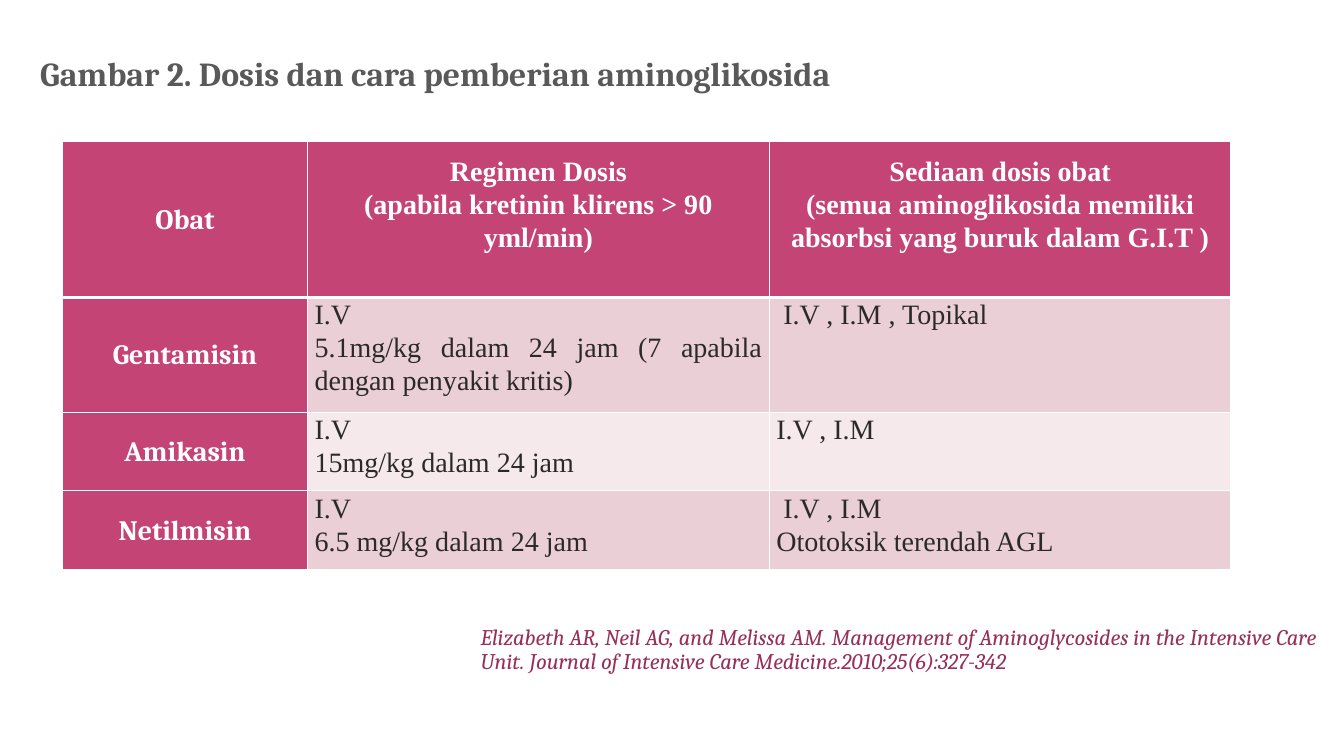
from lxml import etree
from pptx import Presentation
from pptx.dml.color import RGBColor
from pptx.enum.text import MSO_ANCHOR, PP_ALIGN
from pptx.oxml.ns import qn
from pptx.util import Inches, Pt

CENTER, JUSTIFY = PP_ALIGN.CENTER, PP_ALIGN.JUSTIFY
TOP, MIDDLE, BOTTOM = MSO_ANCHOR.TOP, MSO_ANCHOR.MIDDLE, MSO_ANCHOR.BOTTOM
SERIF, ROMAN = "Cambria", "Times New Roman"
COLORS = {
    "title": "595959", "citation": "972F57", "text": "2C2A28",
    "white": "FFFFFF", "header": "C44475", "band_dark": "EACFD6",
    "band_light": "F5E9EC",
}


def write(tf, text, size, font, color, spacing, align=None, bold=False, italic=False):
    tf.text = text
    for p in tf.paragraphs:
        p.alignment = align
        p.line_spacing = spacing
        for r in p.runs:
            r.font.size = Pt(size)
            r.font.name = font
            r.font.bold = bold
            r.font.italic = italic
            r.font.color.rgb = RGBColor.from_string(COLORS[color])


def add_borders(cell, bottom_width):
    tc_pr = cell._tc.get_or_add_tcPr()
    widths = {"a:lnL": 1, "a:lnR": 1, "a:lnT": 1, "a:lnB": bottom_width}
    for i, (tag, width) in enumerate(widths.items()):
        ln = etree.Element(qn(tag), w=str(Pt(width)))
        fill = etree.SubElement(ln, qn("a:solidFill"))
        etree.SubElement(fill, qn("a:srgbClr"), val=COLORS["white"])
        tc_pr.insert(i, ln)


prs = Presentation()
prs.slide_width, prs.slide_height = Inches(13.33), Inches(7.5)
s = prs.slides.add_slide(prs.slide_layouts[6])

# Title and citation
texts = [
    (0.3, 0.52, 9.5, 0.48, TOP, 24, "title", True,
     "Gambar 2. Dosis dan cara pemberian aminoglikosida"),
    (4.67, 6.09, 8.66, 0.65, BOTTOM, 16, "citation", False,
     "Elizabeth AR, Neil AG, and Melissa AM. Management of Aminoglycosides in the "
     "Intensive Care Unit. Journal of Intensive Care Medicine.2010;25(6):327-342"),
]
for x, y, w, h, anchor, size, color, bold, text in texts:
    tf = s.shapes.add_textbox(Inches(x), Inches(y), Inches(w), Inches(h)).text_frame
    tf.word_wrap = True
    tf.vertical_anchor = anchor
    write(tf, text, size, SERIF, color, 0.9, bold=bold, italic=not bold)

# Dosage table
rows = [
    ["Obat",
     "Regimen Dosis\n(apabila kretinin klirens > 90 yml/min)",
     "Sediaan dosis obat\n(semua aminoglikosida memiliki absorbsi yang buruk dalam G.I.T )"],
    ["Gentamisin",
     "I.V\n5.1mg/kg dalam 24 jam (7 apabila dengan penyakit kritis)",
     " I.V , I.M , Topikal"],
    ["Amikasin", "I.V\n15mg/kg dalam 24 jam", "I.V , I.M"],
    ["Netilmisin", "I.V\n6.5 mg/kg dalam 24 jam", " I.V , I.M\nOtotoksik terendah AGL"],
]
col_widths = [2.43, 4.58, 4.58]
row_heights = [1.55, 1.14, 0.78, 0.78]
table = s.shapes.add_table(
    len(rows), len(col_widths), Inches(0.62), Inches(1.4),
    Inches(sum(col_widths)), Inches(sum(row_heights))).table
for column, width in zip(table.columns, col_widths):
    column.width = Inches(width)
for row, height in zip(table.rows, row_heights):
    row.height = Inches(height)

for i, row in enumerate(rows):
    for j, text in enumerate(row):
        cell = table.cell(i, j)
        heading = i == 0 or j == 0
        cell.margin_left = cell.margin_right = Inches(0.07)
        cell.margin_top = 0
        # The two-part column headings sit above the middle
        cell.margin_bottom = Inches(0.3 if i == 0 and j > 0 else 0)
        cell.vertical_anchor = MIDDLE if heading else TOP
        band = "band_dark" if i % 2 else "band_light"
        cell.fill.solid()
        cell.fill.fore_color.rgb = RGBColor.from_string(
            COLORS["header" if heading else band])
        write(cell.text_frame, text, 20, SERIF if j == 0 else ROMAN,
              "white" if heading else "text", 1.07,
              CENTER if heading else JUSTIFY, bold=heading)
        add_borders(cell, 3 if i == 0 else 1)

prs.save("out.pptx")
